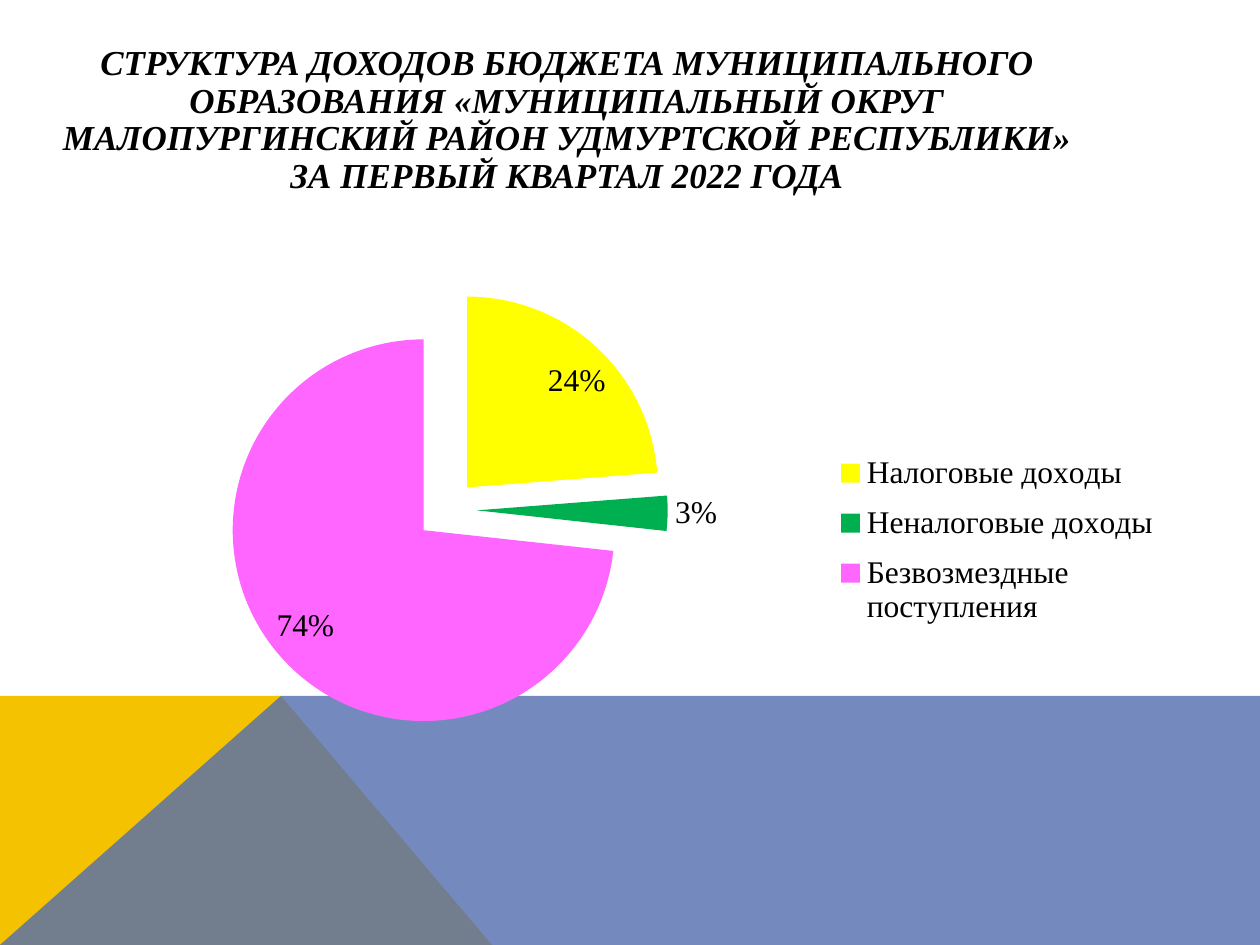
from dataclasses import dataclass

from lxml import etree
from pptx import Presentation
from pptx.chart.data import CategoryChartData
from pptx.dml.color import RGBColor
from pptx.enum.chart import XL_CHART_TYPE, XL_LABEL_POSITION, XL_LEGEND_POSITION
from pptx.enum.text import MSO_ANCHOR, PP_ALIGN
from pptx.oxml.ns import qn
from pptx.util import Pt

PIE = XL_CHART_TYPE.PIE
BEST_FIT = XL_LABEL_POSITION.BEST_FIT
LEGEND_RIGHT = XL_LEGEND_POSITION.RIGHT
MIDDLE = MSO_ANCHOR.MIDDLE
CENTER = PP_ALIGN.CENTER

EMU_PER_PX = 914400 / 126
SLIDE_W, SLIDE_H = 1260, 945
FONT = "Times New Roman"
BLACK = "000000"
EXPLOSION = 16

TITLE = (
    "СТРУКТУРА ДОХОДОВ БЮДЖЕТА МУНИЦИПАЛЬНОГО ОБРАЗОВАНИЯ "
    "«МУНИЦИПАЛЬНЫЙ ОКРУГ МАЛОПУРГИНСКИЙ РАЙОН УДМУРТСКОЙ РЕСПУБЛИКИ»\v"
    "ЗА ПЕРВЫЙ КВАРТАЛ 2022 ГОДА"
)


@dataclass(frozen=True)
class Band:
    points: tuple[tuple[int, int], ...]
    color: str
    opacity: int = 100


@dataclass(frozen=True)
class Income:
    name: str
    percent: int
    color: str


BANDS = (
    Band(((0, SLIDE_H), (0, 696), (281, 696), (492, SLIDE_H)), "F5C201"),
    Band(((0, SLIDE_H), (281, 696), (SLIDE_W, 696), (SLIDE_W, SLIDE_H)), "526DB0", 80),
)
INCOMES = (
    Income("Налоговые доходы", 24, "FFFF00"),
    Income("Неналоговые доходы", 3, "00B050"),
    Income("Безвозмездные поступления", 74, "FF66FF"),
)


def px(length: int) -> int:
    """Turn pixels into EMU."""
    return round(length * EMU_PER_PX)


def rgb(color: str) -> RGBColor:
    return RGBColor.from_string(color)


def style_font(font, size: int, color: str = BLACK, bold: bool = False, italic: bool = False) -> None:
    font.name = FONT
    font.size = Pt(size)
    font.color.rgb = rgb(color)
    font.bold = bold
    font.italic = italic


def add_text(slide, text: str, left: int, top: int, width: int, height: int, **font_format) -> None:
    frame = slide.shapes.add_textbox(px(left), px(top), px(width), px(height)).text_frame
    frame.word_wrap = True
    frame.vertical_anchor = MIDDLE
    paragraph = frame.paragraphs[0]
    paragraph.text = text
    paragraph.alignment = CENTER
    paragraph.line_spacing = 0.9
    for run in paragraph.runs:
        style_font(run.font, **font_format)


def add_band(slide, band: Band) -> None:
    builder = slide.shapes.build_freeform(*band.points[0], scale=EMU_PER_PX)
    builder.add_line_segments(band.points[1:], close=True)
    shape = builder.convert_to_shape()
    shape.shadow.inherit = False
    shape.line.fill.background()
    shape.fill.solid()
    shape.fill.fore_color.rgb = rgb(band.color)
    if band.opacity < 100:
        color = shape.fill._xPr.find(".//" + qn("a:srgbClr"))
        etree.SubElement(color, qn("a:alpha"), val=str(band.opacity * 1000))


def manual_layout(parent, x: float, y: float, w: float, h: float, inner: bool = False):
    """Replace the parent's layout with fractions of the chart area."""
    for old in parent.findall(qn("c:layout")):
        parent.remove(old)
    layout = etree.SubElement(parent, qn("c:layout"))
    manual = etree.SubElement(layout, qn("c:manualLayout"))
    settings = [("layoutTarget", "inner")] if inner else []
    settings += [("xMode", "edge"), ("yMode", "edge"), ("x", x), ("y", y), ("w", w), ("h", h)]
    for tag, value in settings:
        etree.SubElement(manual, qn("c:" + tag), val=str(value))
    return layout


def add_income_pie(slide, left: int, top: int, width: int, height: int) -> None:
    data = CategoryChartData()
    data.categories = [income.name for income in INCOMES]
    data.add_series("Series 1", [income.percent for income in INCOMES])
    chart = slide.shapes.add_chart(PIE, px(left), px(top), px(width), px(height), data).chart
    style_font(chart.font, 18)
    chart.has_title = False

    plot = chart.plots[0]
    plot.vary_by_categories = True
    series = plot.series[0]
    for index, income in enumerate(INCOMES):
        fill = series.points[index].format.fill
        fill.solid()
        fill.fore_color.rgb = rgb(income.color)
    for slice_format in series._element.findall(qn("c:dPt")):
        explosion = etree.Element(qn("c:explosion"), val=str(EXPLOSION))
        slice_format.find(qn("c:spPr")).addprevious(explosion)

    labels = series.data_labels
    labels.show_value = True
    labels.number_format = '0"%"'
    labels.number_format_is_linked = False
    labels.position = BEST_FIT
    style_font(labels.font, 18)

    chart.has_legend = True
    legend = chart.legend
    legend.position = LEGEND_RIGHT
    legend.include_in_layout = False
    style_font(legend.font, 18)
    legend_layout = manual_layout(legend._element, 0.69, 0.38, 0.3, 0.33)
    legend._element.find(qn("c:legendPos")).addnext(legend_layout)

    plot_area = chart._chartSpace.find(".//" + qn("c:plotArea"))
    plot_area.insert(0, manual_layout(plot_area, 0.12, 0.18, 0.46, 0.63, inner=True))


def main() -> None:
    presentation = Presentation()
    presentation.slide_width = px(SLIDE_W)
    presentation.slide_height = px(SLIDE_H)
    slide = presentation.slides.add_slide(presentation.slide_layouts[6])
    for band in BANDS:
        add_band(slide, band)
    add_text(slide, TITLE, 0, 42, 1134, 157, size=20, bold=True, italic=True)
    add_income_pie(slide, 53, 210, 1124, 606)
    presentation.save("out.pptx")


if __name__ == "__main__":
    main()
